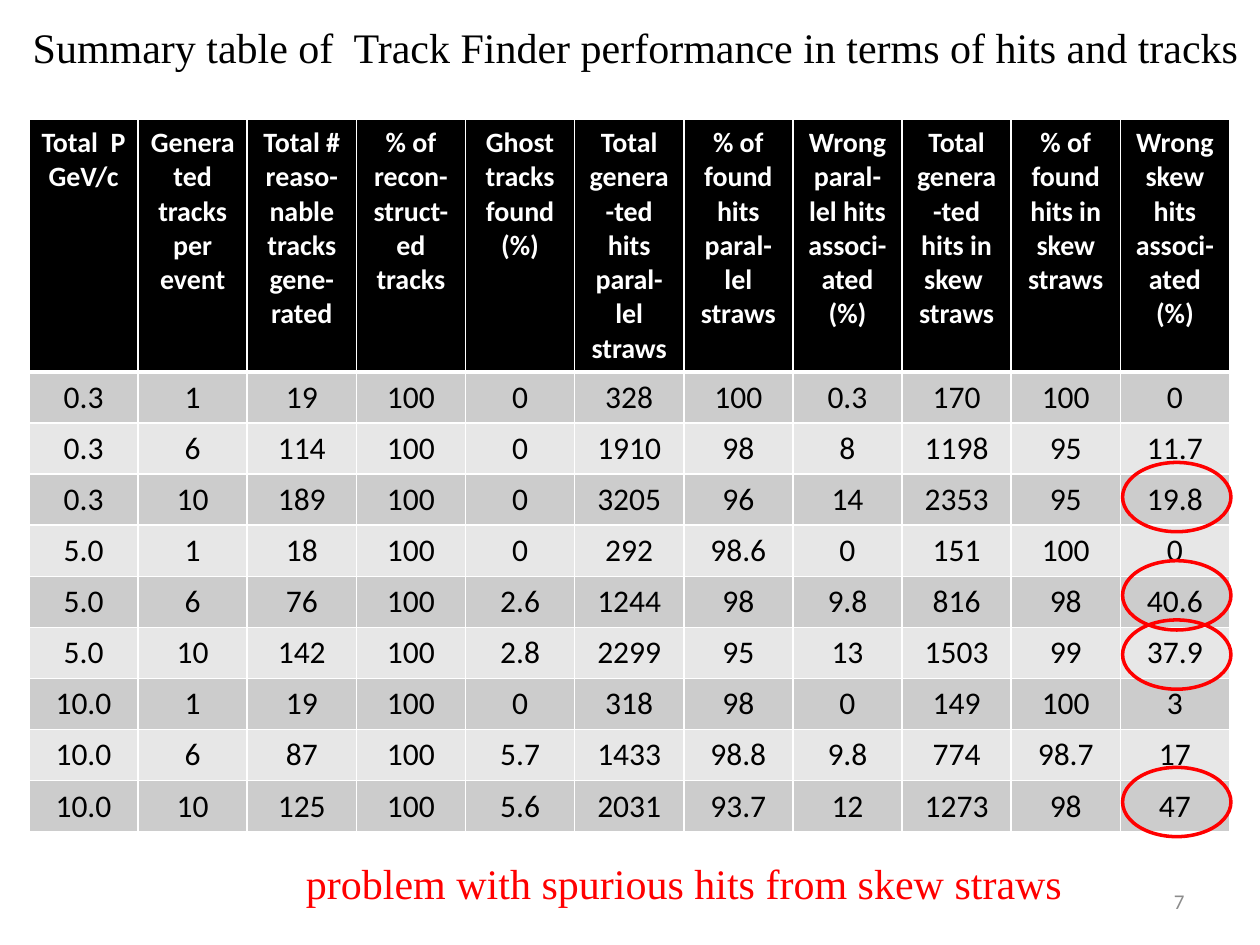
from lxml import etree
from pptx import Presentation
from pptx.dml.color import RGBColor
from pptx.enum.shapes import MSO_SHAPE
from pptx.enum.text import MSO_ANCHOR, PP_ALIGN
from pptx.oxml.ns import qn
from pptx.util import Inches, Pt

OVAL = MSO_SHAPE.OVAL
LEFT, CENTER, RIGHT = PP_ALIGN.LEFT, PP_ALIGN.CENTER, PP_ALIGN.RIGHT
TOP, MIDDLE = MSO_ANCHOR.TOP, MSO_ANCHOR.MIDDLE

COLORS = {
    "black": "000000",
    "white": "FFFFFF",
    "odd_row": "CCCCCC",
    "even_row": "E7E7E7",
    "alert": "FF0000",
    "number": "8C8C8C",
}
SERIF = {"name": "Times New Roman", "size": Pt(24), "bold": False}
HEADER = {"name": "Calibri", "size": Pt(16), "bold": True}
BODY = {"name": "Calibri", "size": Pt(18), "bold": False}
NUMBER = {"name": "Calibri", "size": Pt(12), "bold": False}

TABLE_LEFT, TABLE_TOP, TABLE_WIDTH = 0.23, 0.95, 9.53
HEADER_HEIGHT, ROW_HEIGHT = 1.99, 0.4

HEADINGS = [
    "Total  P\nGeV/c",
    "Generated\ntracks\nper event",
    "Total # reaso-nable tracks\ngene-rated",
    "% of recon-struct-ed tracks",
    "Ghost tracks found (%)",
    "Total genera-ted hits paral-lel straws",
    "% of found hits paral-lel straws",
    "Wrong paral-lel hits associ-ated (%)",
    "Total genera-ted hits in skew  straws",
    "% of found hits in skew straws",
    "Wrong skew\nhits associ-ated\n(%)",
]
RESULTS = [
    ["0.3", "1", "19", "100", "0", "328", "100", "0.3", "170", "100", "0"],
    ["0.3", "6", "114", "100", "0", "1910", "98", "8", "1198", "95", "11.7"],
    ["0.3", "10", "189", "100", "0", "3205", "96", "14", "2353", "95", "19.8"],
    ["5.0", "1", "18", "100", "0", "292", "98.6", "0", "151", "100", "0"],
    ["5.0", "6", "76", "100", "2.6", "1244", "98", "9.8", "816", "98", "40.6"],
    ["5.0", "10", "142", "100", "2.8", "2299", "95", "13", "1503", "99", "37.9"],
    ["10.0", "1", "19", "100", "0", "318", "98", "0", "149", "100", "3"],
    ["10.0", "6", "87", "100", "5.7", "1433", "98.8", "9.8", "774", "98.7", "17"],
    ["10.0", "10", "125", "100", "5.6", "2031", "93.7", "12", "1273", "98", "47"],
]
CIRCLE_TOPS = [3.67, 4.45, 6.09, 4.92]


def rgb(name):
    return RGBColor.from_string(COLORS[name])


def write_text(frame, text, font_format, color, align):
    frame.text = text
    for para in frame.paragraphs:
        para.alignment = align
        for key, value in font_format.items():
            setattr(para.font, key, value)
        para.font.color.rgb = rgb(color)


def place(shape, left, top, width, height):
    shape.left, shape.top = Inches(left), Inches(top)
    shape.width, shape.height = Inches(width), Inches(height)


def add_title(page, text):
    title = page.shapes.title
    place(title, 0.16, 0.12, 9.8, 0.5)
    title.text_frame.word_wrap = False
    title.text_frame.vertical_anchor = TOP
    write_text(title.text_frame, text, SERIF, "black", LEFT)


def add_label(page, area, text, font_format, color, align, anchor, wrap):
    box = page.shapes.add_textbox(*map(Inches, area))
    box.text_frame.word_wrap = wrap
    box.text_frame.vertical_anchor = anchor
    write_text(box.text_frame, text, font_format, color, align)


def set_borders(cell, bottom_width):
    """Draw white lines round a cell; they must precede its fill in the XML."""
    properties = cell._tc.get_or_add_tcPr()
    widths = {"a:lnL": 1, "a:lnR": 1, "a:lnT": 1, "a:lnB": bottom_width}
    for index, (tag, width) in enumerate(widths.items()):
        line = etree.Element(qn(tag), w=str(Pt(width)))
        fill = etree.SubElement(line, qn("a:solidFill"))
        etree.SubElement(fill, qn("a:srgbClr"), val=COLORS["white"])
        properties.insert(index, line)


def fill_cell(cell, text, font_format, color, fill, bottom_width):
    write_text(cell.text_frame, text, font_format, color, CENTER)
    cell.fill.solid()
    cell.fill.fore_color.rgb = rgb(fill)
    set_borders(cell, bottom_width)


def add_results_table(page):
    height = HEADER_HEIGHT + ROW_HEIGHT * len(RESULTS)
    area = map(Inches, (TABLE_LEFT, TABLE_TOP, TABLE_WIDTH, height))
    table = page.shapes.add_table(len(RESULTS) + 1, len(HEADINGS), *area).table
    for column in table.columns:
        column.width = Inches(TABLE_WIDTH / len(HEADINGS))
    for index, row in enumerate(table.rows):
        row.height = Inches(ROW_HEIGHT if index else HEADER_HEIGHT)
    for column, heading in enumerate(HEADINGS):
        fill_cell(table.cell(0, column), heading, HEADER, "white", "black", 3)
    for row, values in enumerate(RESULTS, start=1):
        fill = "odd_row" if row % 2 else "even_row"
        for column, value in enumerate(values):
            # The first row shares the thick line under the header
            cell = table.cell(row, column)
            fill_cell(cell, value, BODY, "black", fill, 1)
            if row == 1:
                cell._tc.tcPr.find(qn("a:lnT")).set("w", str(Pt(3)))


def add_circle(page, top):
    circle = page.shapes.add_shape(OVAL, *map(Inches, (8.91, top, 0.86, 0.55)))
    circle.shadow.inherit = False
    circle.fill.background()
    circle.line.color.rgb = rgb("alert")
    circle.line.width = Pt(2)


def main():
    deck = Presentation()
    deck.slide_width, deck.slide_height = Inches(10), Inches(7.5)
    page = deck.slides.add_slide(deck.slide_layouts[5])
    add_title(page, "Summary table of  Track Finder performance in terms of hits and tracks")
    add_results_table(page)
    for top in CIRCLE_TOPS:
        add_circle(page, top)
    add_label(page, (2.33, 6.76, 6.26, 0.5), "problem with spurious hits from skew straws",
              SERIF, "alert", LEFT, TOP, False)
    add_label(page, (7.17, 6.95, 2.33, 0.4), "7", NUMBER, "number", RIGHT, MIDDLE, True)
    deck.save("out.pptx")


if __name__ == "__main__":
    main()
